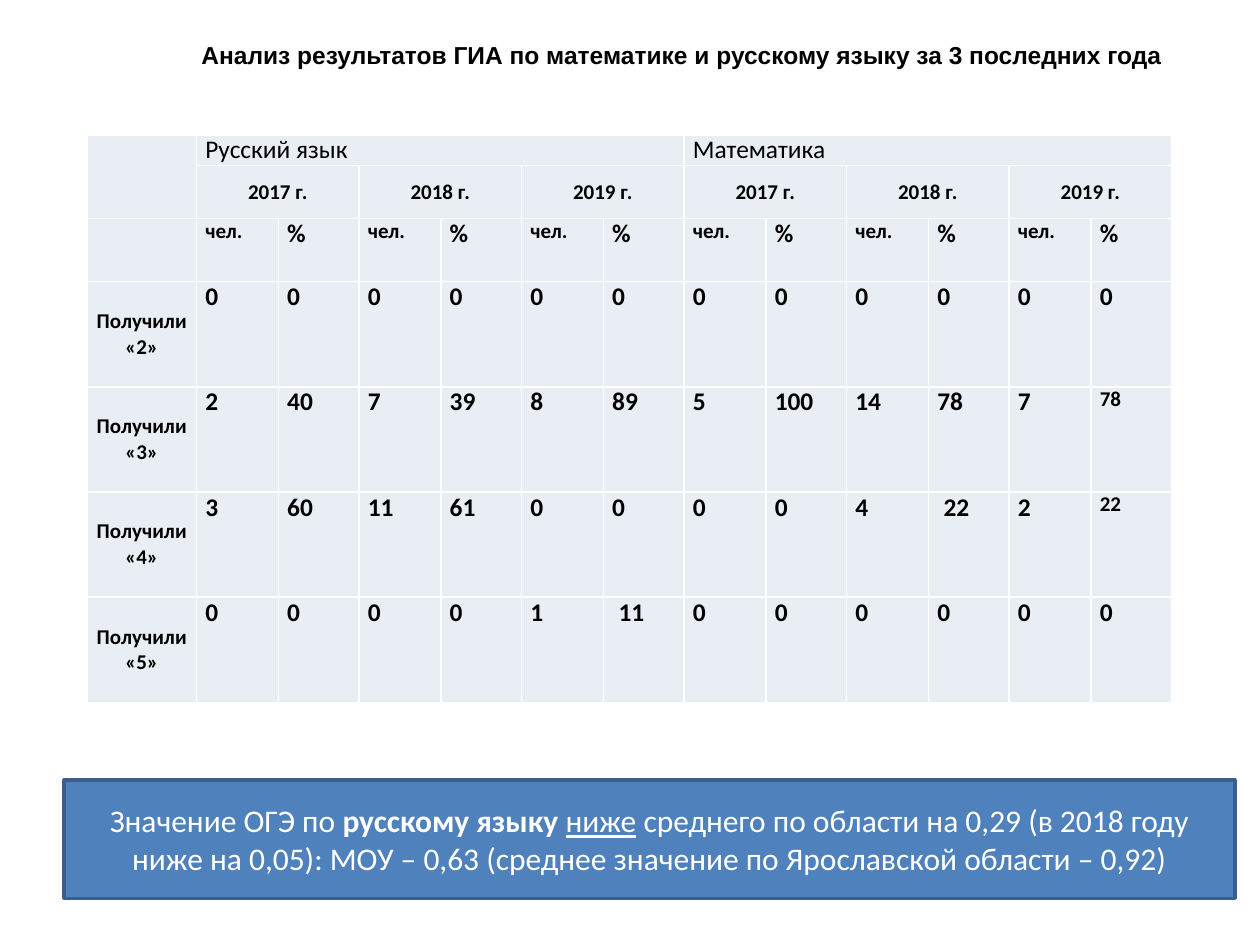
from typing import NamedTuple

from lxml import etree
from pptx import Presentation
from pptx import util as u
from pptx.dml.color import RGBColor
from pptx.enum import shapes, text
from pptx.oxml.ns import qn

HUES = {"cell": "E9EDF4", "rule": "FFFFFF", "ink": "000000",
        "box": "4F81BD", "edge": "3A5F8C", "light": "FFFFFF"}
ALIGN = text.PP_ALIGN
MID = text.MSO_ANCHOR.MIDDLE
BIG, SMALL = 14.5, 12

GRADES = {
    "2": [0] * 12,
    "3": [2, 40, 7, 39, 8, 89, 5, 100, 14, 78, 7, 78],
    "4": [3, 60, 11, 61, 0, 0, 0, 0, 4, 22, 2, 22],
    "5": [0, 0, 0, 0, 1, 11, 0, 0, 0, 0, 0, 0],
}
TIGHT = {("3", 12), ("4", 12)}      # values set in the small size
SHIFTED = {("4", 10), ("5", 6)}     # values set slightly to the right


class Run(NamedTuple):
    words: str
    size: float
    hue: str = "ink"
    bold: bool = False
    line: bool = False
    face: str = "Calibri"


class Entry(NamedTuple):
    row: int
    col: int
    run: Run
    span: int = 1
    mid: bool = False
    left: float = 0.07


def tint(name: str) -> RGBColor:
    return RGBColor.from_string(HUES[name])


def write(para, runs: list[Run], align) -> None:
    para.alignment = align
    for item in runs:
        run = para.add_run()
        run.text = item.words
        font = run.font
        font.name, font.size = item.face, u.Pt(item.size)
        font.bold, font.underline = item.bold, item.line
        font.color.rgb = tint(item.hue)


def dress(cell) -> None:
    """Give a cell its fill, insets and four thin borders."""
    cell.margin_left = cell.margin_right = u.Inches(0.07)
    cell.margin_top = cell.margin_bottom = 0
    props = cell._tc.get_or_add_tcPr()
    for side in ("a:lnL", "a:lnR", "a:lnT", "a:lnB"):
        line = etree.SubElement(props, qn(side), w=str(u.Pt(1)))
        fill = etree.SubElement(line, qn("a:solidFill"))
        etree.SubElement(fill, qn("a:srgbClr"), val=HUES["rule"])
    cell.fill.solid()
    cell.fill.fore_color.rgb = tint("cell")


def entries() -> list[Entry]:
    out = [Entry(0, 1, Run("Русский язык", BIG), 6),
           Entry(0, 7, Run("Математика", BIG), 6)]
    for n in range(6):
        col = 1 + 2 * n
        year = f"{2017 + n % 3} г."
        out += [Entry(1, col, Run(year, SMALL, bold=True), 2, True),
                Entry(2, col, Run("чел.", SMALL, bold=True)),
                Entry(2, col + 1, Run("%", BIG, bold=True))]
    for row, (grade, vals) in enumerate(GRADES.items(), 3):
        name = Run(f"Получили «{grade}»", SMALL, bold=True)
        out.append(Entry(row, 0, name, mid=True))
        for col, val in enumerate(vals, 1):
            size = SMALL if (grade, col) in TIGHT else BIG
            left = 0.12 if (grade, col) in SHIFTED else 0.07
            out.append(Entry(row, col, Run(str(val), size, bold=True), left=left))
    return out


def add_grid(slide) -> None:
    cols = [0.87] + [0.65, 0.64] * 6
    rows = [0.24, 0.42, 0.5] + [0.835] * 4
    frame = slide.shapes.add_table(
        len(rows), len(cols), u.Inches(0.69), u.Inches(1.07),
        u.Inches(sum(cols)), u.Inches(sum(rows)))
    grid = frame.table
    grid.first_row = grid.horz_banding = False
    for col, size in zip(grid.columns, cols):
        col.width = u.Inches(size)
    for row, size in zip(grid.rows, rows):
        row.height = u.Inches(size)
    for cell in grid.iter_cells():
        dress(cell)
    grid.cell(0, 0).merge(grid.cell(1, 0))
    for item in entries():
        cell = grid.cell(item.row, item.col)
        if item.span > 1:
            cell.merge(grid.cell(item.row, item.col + item.span - 1))
        cell.margin_left = u.Inches(item.left)
        if item.mid:
            cell.vertical_anchor = MID
        write(cell.text_frame.paragraphs[0], [item.run],
              ALIGN.CENTER if item.mid else ALIGN.JUSTIFY)


def add_title(slide) -> None:
    box = slide.shapes.add_textbox(
        u.Inches(1.5), u.Inches(0.27), u.Inches(7.87), u.Inches(0.54))
    frame = box.text_frame
    frame.word_wrap = False
    words = "Анализ результатов ГИА по математике и русскому языку за 3 последних года"
    write(frame.paragraphs[0], [Run(words, 14, bold=True, face="Arial")], ALIGN.JUSTIFY)


def add_note(slide) -> None:
    box = slide.shapes.add_shape(
        shapes.MSO_SHAPE.RECTANGLE,
        u.Inches(0.51), u.Inches(6.19), u.Inches(9.29), u.Inches(0.94))
    box.shadow.inherit = False
    box.fill.solid()
    box.fill.fore_color.rgb = tint("box")
    box.line.color.rgb = tint("edge")
    box.line.width = u.Pt(2)
    frame = box.text_frame
    frame.word_wrap = True
    frame.vertical_anchor = MID
    write(frame.paragraphs[0], [
        Run("Значение ОГЭ по ", 18, "light"),
        Run("русскому языку ", 18, "light", bold=True),
        Run("ниже", 18, "light", line=True),
        Run(" среднего по области на 0,29 (в 2018 году ниже на 0,05): "
            "МОУ – 0,63 (среднее значение по Ярославской области – 0,92)",
            18, "light"),
    ], ALIGN.CENTER)


def main() -> None:
    deck = Presentation()
    deck.slide_width, deck.slide_height = u.Inches(10), u.Inches(7.5)
    slide = deck.slides.add_slide(deck.slide_layouts[6])
    add_grid(slide)
    add_title(slide)
    add_note(slide)
    deck.save("out.pptx")


if __name__ == "__main__":
    main()
